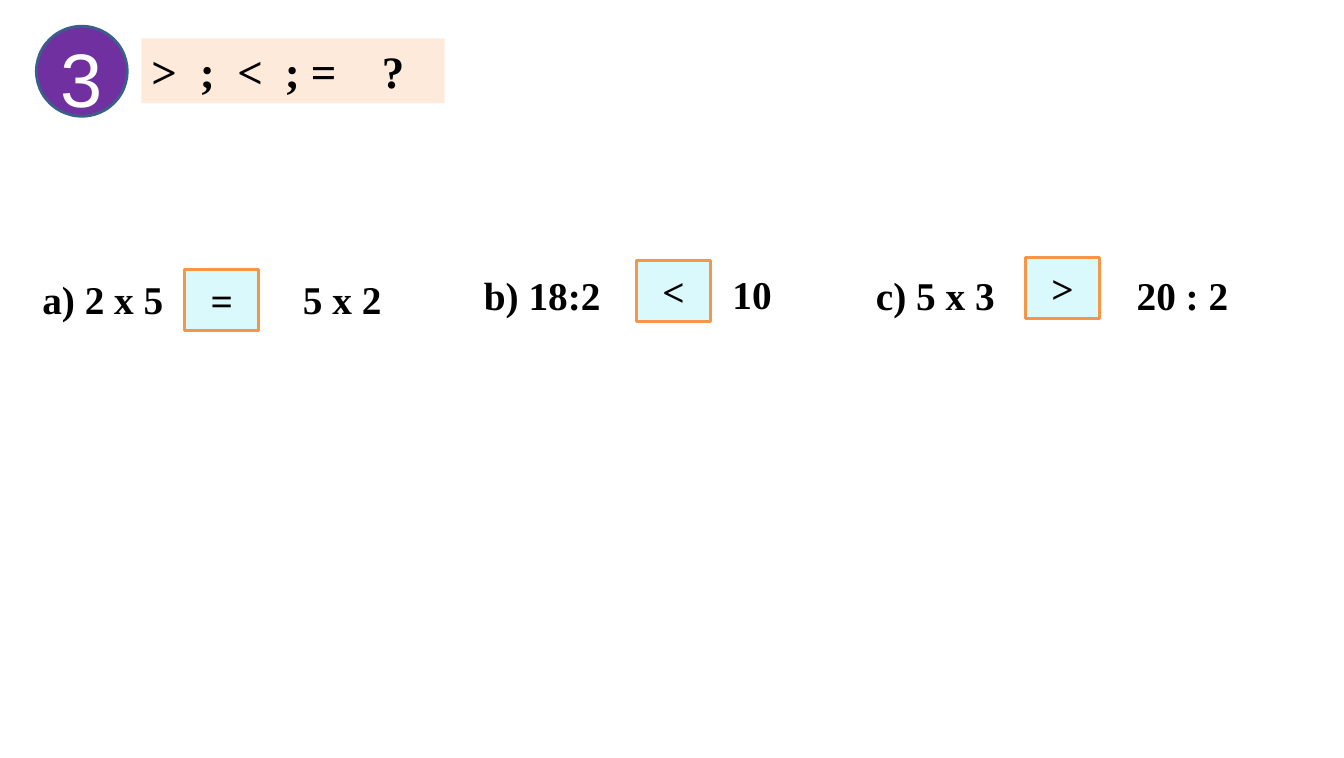
import pptx
import pptx.util
import pptx.dml.color
import pptx.enum.shapes
import pptx.enum.text
import pptx.oxml.ns
from lxml import etree

SHAPES = pptx.enum.shapes.MSO_SHAPE
ALIGN = pptx.enum.text.PP_ALIGN
ANCHOR = pptx.enum.text.MSO_ANCHOR
COLUMNS, ROWS = 133, 75


def color(hex_string):
    return pptx.dml.color.RGBColor.from_string(hex_string)


def write_text(shape, text, size=28, font="Times New Roman", ink="000000", bold=True,
               align=ALIGN.JUSTIFY, anchor=ANCHOR.TOP, wrap=True, tabs=()):
    """Fill a shape with one formatted line; tabs are inches from the text edge."""
    frame = shape.text_frame
    frame.word_wrap = wrap
    frame.vertical_anchor = anchor
    paragraph = frame.paragraphs[0]
    paragraph.alignment = align
    if tabs:
        properties = paragraph._p.get_or_add_pPr()
        tab_list = etree.SubElement(properties, pptx.oxml.ns.qn("a:tabLst"))
        for position in tabs:
            etree.SubElement(tab_list, pptx.oxml.ns.qn("a:tab"),
                             pos=str(pptx.util.Inches(position)), algn="l")
    run = paragraph.add_run()
    run.text = text
    run.font.size = pptx.util.Pt(size)
    run.font.name = font
    run.font.bold = bold
    run.font.color.rgb = color(ink)


class ExerciseSlide:
    def __init__(self, presentation):
        self.slide = presentation.slides.add_slide(presentation.slide_layouts[6])
        self.column = presentation.slide_width / COLUMNS
        self.row = presentation.slide_height / ROWS

    def place(self, left, top, width, height):
        """Turn grid columns and rows into slide lengths."""
        return (round(left * self.column), round(top * self.row),
                round(width * self.column), round(height * self.row))

    def panel(self, kind, area, fill, line=None):
        shape = self.slide.shapes.add_shape(kind, *self.place(*area))
        shape.shadow.inherit = False
        shape.fill.solid()
        shape.fill.fore_color.rgb = color(fill)
        if line:
            shape.line.color.rgb = color(line)
            shape.line.width = pptx.util.Pt(2)
        else:
            shape.line.fill.background()
        return shape

    def number_badge(self, text, area):
        badge = self.panel(SHAPES.OVAL, area, "7030A0", "3A5F8C")
        frame = badge.text_frame
        frame.margin_left = frame.margin_right = frame.margin_bottom = 0
        frame.margin_top = pptx.util.Inches(0.11)
        write_text(badge, text, size=54, font="Arial", ink="FFFFFF", bold=False,
                   align=ALIGN.CENTER, anchor=ANCHOR.MIDDLE, wrap=False)

    def heading(self, text, area, tabs):
        write_text(self.panel(SHAPES.RECTANGLE, area, "FEEADA"), text, size=32, tabs=tabs)

    def expression(self, text, left, top):
        box = self.slide.shapes.add_textbox(*self.place(left, top, 17.5, 5.7))
        write_text(box, text)

    def answer(self, sign, left, top):
        box = self.panel(SHAPES.RECTANGLE, (left, top, 7.3, 6), "DAF9FC", "F79646")
        write_text(box, sign, align=ALIGN.CENTER, anchor=ANCHOR.MIDDLE)


def main():
    presentation = pptx.Presentation()
    presentation.slide_width = pptx.util.Inches(13.3)
    presentation.slide_height = pptx.util.Inches(7.5)
    exercise = ExerciseSlide(presentation)

    exercise.number_badge("3", (3.6, 2.6, 9, 8.9))
    exercise.heading(">\t;\t<\t; =\t?", (14, 3.8, 30, 6.4), tabs=(0.48, 0.85, 1.32, 2.28))

    # Each comparison: left side, sign, right side, each with its column and row
    comparisons = [
        (("a) 2 x 5", 3.2, 26.7), ("=", 18.3, 26.7), ("5 x 2", 29, 26.7)),
        (("b) 18:2", 46.9, 26.3), ("<", 63, 25.8), ("10", 71.5, 26.2)),
        (("c) 5 x 3", 85.7, 26.3), (">", 101.5, 25.5), ("20 : 2", 111.5, 26.3)),
    ]
    for left_side, sign, right_side in comparisons:
        exercise.expression(*left_side)
        exercise.expression(*right_side)
        exercise.answer(*sign)

    presentation.save("out.pptx")


if __name__ == "__main__":
    main()
